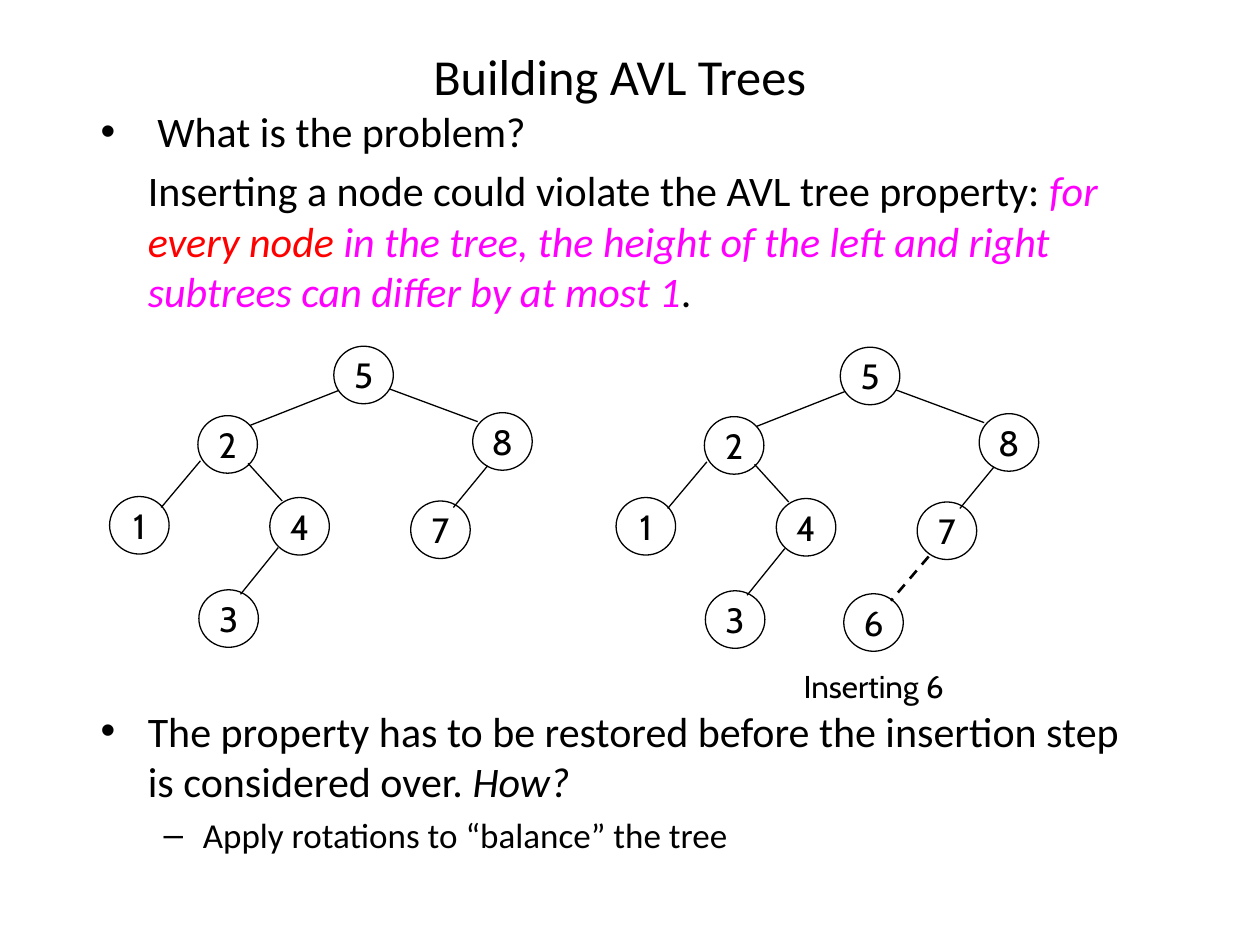
from pptx import Presentation
from pptx.dml.color import RGBColor
from pptx.enum.dml import MSO_LINE
from pptx.enum.shapes import MSO_CONNECTOR, MSO_SHAPE
from pptx.enum.text import MSO_ANCHOR, PP_ALIGN
from pptx.oxml.ns import qn
from pptx.util import Cm, Pt
from lxml.etree import SubElement

BLACK = RGBColor(0x00, 0x00, 0x00)
RED = RGBColor(0xFF, 0x00, 0x00)
MAGENTA = RGBColor(0xFF, 0x00, 0xFF)

NODE_WIDTH, NODE_HEIGHT = 1.2, 1.16
NODES = {
    "5": (4.52, 0), "2": (1.78, 1.4), "1": (0, 3.03), "4": (3.23, 3.05),
    "3": (1.8, 4.91), "8": (7.32, 1.34), "7": (6.07, 3.12),
}
EDGES = [
    (4.62, 0.89, 2.82, 1.6), (5.64, 0.86, 7.42, 1.52),
    (1.83, 2.31, 1.04, 3.25), (2.79, 2.36, 3.48, 3.12),
    (3.4, 4.06, 2.64, 5), (7.62, 2.41, 6.93, 3.25),
]
INSERTED_NODE = ("6", 4.59, 4.97)
INSERTED_EDGE = (6.3, 4.22, 5.54, 5.11)


def style_span(span, font, size, color=BLACK, italic=False):
    span.font.name = font
    span.font.size = Pt(size)
    span.font.color.rgb = color
    span.font.italic = italic


def add_title(page, left, top, width, height):
    title = page.shapes.title
    title.left, title.top, title.width, title.height = map(Cm, (left, top, width, height))
    title.text_frame.text = "Building AVL Trees"
    title.text_frame.vertical_anchor = MSO_ANCHOR.MIDDLE
    para = title.text_frame.paragraphs[0]
    para.alignment = PP_ALIGN.CENTER
    style_span(para.runs[0], "Calibri", 28.8)


def indent(para, margin, hanging, bullet):
    properties = para._p.get_or_add_pPr()
    properties.set("marL", str(Cm(margin)))
    properties.set("indent", str(-Cm(hanging)))
    if bullet:
        SubElement(properties, qn("a:buFont")).set("typeface", "Arial")
        SubElement(properties, qn("a:buChar")).set("char", bullet)
    else:
        SubElement(properties, qn("a:buNone"))


def add_body(page, left, top, width, height):
    box = page.shapes.add_textbox(Cm(left), Cm(top), Cm(width), Cm(height))
    frame = box.text_frame
    frame.word_wrap = True
    rows = [
        (0, 0.95, 0.95, "•", 24, [(" What is the problem?", BLACK, False)]),
        (4.8, 0.95, 0, None, 24, [
            ("Inserting a node could violate the AVL tree property: ", BLACK, False),
            ("for ", MAGENTA, True),
            ("every node", RED, True),
            (" in the tree, the height of the left and right subtrees "
             "can differ by at most 1", MAGENTA, True),
            (".", BLACK, False),
        ]),
        (222.5, 0.95, 0.95, "•", 24, [
            ("The property has to be restored before the insertion step "
             "is considered over. ", BLACK, False),
            ("How?", BLACK, True),
        ]),
        (4, 2.06, 0.79, "–", 20, [("Apply rotations to “balance” the tree", BLACK, False)]),
    ]
    for index, (space, margin, hanging, bullet, size, spans) in enumerate(rows):
        para = frame.add_paragraph() if index else frame.paragraphs[0]
        para.space_before = Pt(space)
        indent(para, margin, hanging, bullet)
        for text, color, italic in spans:
            span = para.add_run()
            span.text = text
            style_span(span, "Calibri", size, color, italic)


def add_node(tree, label, left, top):
    node = tree.shapes.add_shape(
        MSO_SHAPE.OVAL, Cm(left), Cm(top), Cm(NODE_WIDTH), Cm(NODE_HEIGHT))
    node.shadow.inherit = False
    node.fill.background()
    node.line.color.rgb = BLACK
    node.line.width = Pt(0.75)
    frame = node.text_frame
    frame.margin_left = frame.margin_right = frame.margin_top = frame.margin_bottom = 0
    frame.word_wrap = False
    frame.vertical_anchor = MSO_ANCHOR.MIDDLE
    frame.text = label
    frame.paragraphs[0].alignment = PP_ALIGN.CENTER
    style_span(frame.paragraphs[0].runs[0], "Cabin", 20)


def add_edge(tree, left, top, edge, width=0.75, dash=None):
    x1, y1, x2, y2 = edge
    line = tree.shapes.add_connector(
        MSO_CONNECTOR.STRAIGHT, Cm(left + x1), Cm(top + y1), Cm(left + x2), Cm(top + y2))
    line.line.color.rgb = BLACK
    line.line.width = Pt(width)
    if dash:
        line.line.dash_style = dash
    SubElement(line._element.spPr, qn("a:effectLst"))


def add_tree(page, left, top):
    tree = page.shapes.add_group_shape()
    for label, (x, y) in NODES.items():
        add_node(tree, label, left + x, top + y)
    for edge in EDGES:
        add_edge(tree, left, top, edge)
    return tree


def add_insertion(tree, left, top):
    label, x, y = INSERTED_NODE
    add_node(tree, label, left + x, top + y)
    add_edge(tree, left, top, INSERTED_EDGE, 1.5, MSO_LINE.DASH)
    caption = tree.shapes.add_textbox(Cm(left + 3.53), Cm(top + 6.32), Cm(3.56), Cm(1.02))
    caption.text_frame.word_wrap = False
    caption.text_frame.text = "Inserting 6"
    style_span(caption.text_frame.paragraphs[0].runs[0], "Cabin", 18)


def main():
    deck = Presentation()
    deck.slide_width, deck.slide_height = Cm(25.4), Cm(19.05)
    page = deck.slides.add_slide(deck.slide_layouts[5])
    add_title(page, 1.7, 0.84, 21.59, 1.35)
    add_body(page, 1.78, 2.01, 21.59, 16.38)
    add_tree(page, 2.21, 6.98)
    after_insertion = add_tree(page, 12.42, 7)
    add_insertion(after_insertion, 12.42, 7)
    deck.save("out.pptx")


if __name__ == "__main__":
    main()
